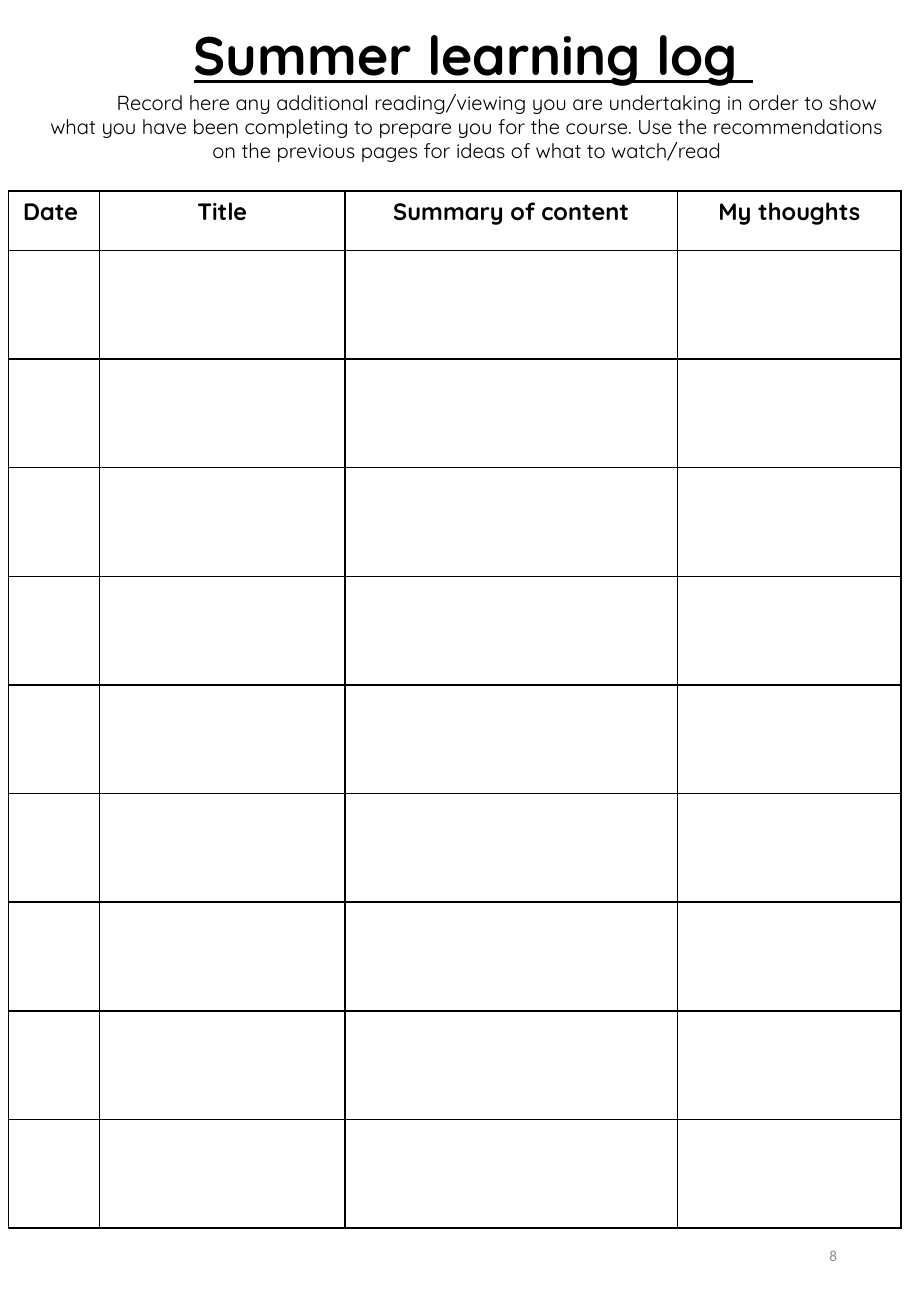
from lxml.etree import SubElement
from pptx import Presentation
from pptx.dml.color import RGBColor
from pptx.enum.text import MSO_ANCHOR, MSO_AUTO_SIZE, PP_ALIGN
from pptx.oxml.ns import qn
from pptx.util import Inches, Pt

COLORS = {"ink": "000000", "page": "FFFFFF", "number": "8C8C8C"}
SLIDE_COLS, SLIDE_ROWS = 750, 1083
UNIT = Inches(7.5) / SLIDE_COLS
HEADERS = ["Date ", "Title", "Summary of content", "My thoughts"]
COLUMN_SPANS = [75, 202, 274, 184]
LOG_ROWS = 9
HEADER_SPAN, TABLE_SPAN = 49, 854
INTRO = (
    "Record here any additional reading/viewing you are undertaking in order to show "
    "what you have been completing to prepare you for the course. Use the "
    "recommendations on the previous pages for ideas of what to watch/read"
)
HEADING = {"name": "Quicksand", "size": Pt(32), "bold": True, "underline": True}
TAB = {"name": "Quicksand", "size": Pt(18), "bold": False, "underline": False}
BODY = {"name": "Quicksand", "size": Pt(12), "bold": False}
COLUMN_HEAD = {"name": "Quicksand", "size": Pt(14), "bold": True}
PAGE_NUMBER = {"name": "Calibri", "size": Pt(9), "bold": False}


def grid(*spans):
    return [round(span * UNIT) for span in spans]


def add_run(p, text, font, color="ink"):
    r = p.add_run()
    r.text = text
    for key, value in font.items():
        setattr(r.font, key, value)
    r.font.color.rgb = RGBColor.from_string(COLORS[color])


def format_paragraph(p, align=PP_ALIGN.CENTER):
    formats = {"alignment": align, "line_spacing": 1.0,
               "space_before": Pt(0), "space_after": Pt(0)}
    for key, value in formats.items():
        setattr(p, key, value)


def fill_text(sp, place, runs, frame, indent=0):
    sp.left, sp.top, sp.width, sp.height = grid(*place)
    tf = sp.text_frame
    for key, value in {"word_wrap": True, "auto_size": MSO_AUTO_SIZE.NONE, **frame}.items():
        setattr(tf, key, value)
    p = tf.paragraphs[0]
    format_paragraph(p)
    pPr = p._p.get_or_add_pPr()
    pPr.set("marL", "0")
    pPr.set("indent", str(grid(indent)[0]))
    SubElement(pPr, qn("a:buNone"))
    for text, font in runs:
        add_run(p, text, font)


def add_page_number(s, text, place):
    tf = s.shapes.add_textbox(*grid(*place)).text_frame
    tf.word_wrap = True
    tf.vertical_anchor = MSO_ANCHOR.MIDDLE
    format_paragraph(tf.paragraphs[0], PP_ALIGN.RIGHT)
    add_run(tf.paragraphs[0], text, PAGE_NUMBER, "number")


def style_cell(cell):
    tcPr = cell._tc.get_or_add_tcPr()
    for side in ("lnL", "lnR", "lnT", "lnB"):
        ln = SubElement(tcPr, qn(f"a:{side}"), w=str(Pt(1)))
        fill = SubElement(ln, qn("a:solidFill"))
        SubElement(fill, qn("a:srgbClr"), val=COLORS["ink"])
    cell.fill.background()


def add_log_table(s, left, top):
    frame = s.shapes.add_table(LOG_ROWS + 1, len(HEADERS),
                               *grid(left, top, sum(COLUMN_SPANS), TABLE_SPAN))
    table = frame.table
    table.first_row = table.horz_banding = False
    for column, span in zip(table.columns, COLUMN_SPANS):
        column.width = grid(span)[0]
    row_spans = [HEADER_SPAN] + [(TABLE_SPAN - HEADER_SPAN) / LOG_ROWS] * LOG_ROWS
    for row, span in zip(table.rows, row_spans):
        row.height = grid(span)[0]
    for cell in table.iter_cells():
        style_cell(cell)
    for cell, header in zip(table.rows[0].cells, HEADERS):
        p = cell.text_frame.paragraphs[0]
        format_paragraph(p)
        add_run(p, header, COLUMN_HEAD)


def main():
    prs = Presentation()
    prs.slide_width, prs.slide_height = grid(SLIDE_COLS, SLIDE_ROWS)
    s = prs.slides.add_slide(prs.slide_layouts[1])
    s.background.fill.solid()
    s.background.fill.fore_color.rgb = RGBColor.from_string(COLORS["page"])
    frame = {"margin_top": 0, "margin_bottom": 0, "vertical_anchor": MSO_ANCHOR.TOP}
    fill_text(s.shapes.title, (26, 18, 717, 56),
              [("Summer learning log ", HEADING), ("\t", TAB)], frame, 50)
    fill_text(s.placeholders[1], (26, 74, 717, 66), [(INTRO, BODY)], frame, 50)
    add_log_table(s, 7, 157)
    add_page_number(s, "8", (530, 1004, 169, 58))
    prs.save("out.pptx")


if __name__ == "__main__":
    main()
